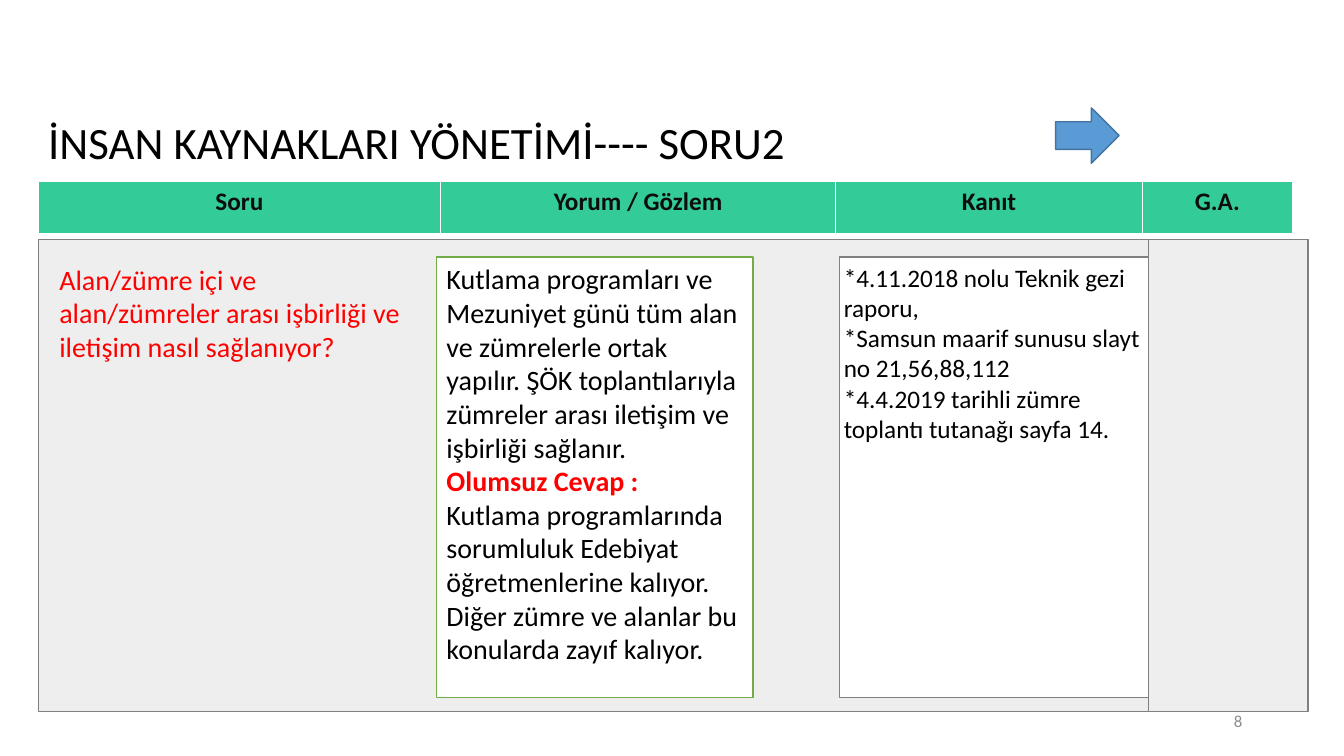
"""Builds the slide on question 2 of human resources management."""
from lxml.etree import SubElement
from pptx import Presentation
from pptx.dml.color import RGBColor
from pptx.enum.shapes import MSO_SHAPE
from pptx.enum.text import MSO_ANCHOR, PP_ALIGN
from pptx.oxml.ns import qn
from pptx.util import Inches, Pt

TITLE = "İNSAN KAYNAKLARI YÖNETİMİ---- SORU2"
PAGE_NUMBER = "8"
COLUMNS = [("Soru", 3.99), ("Yorum / Gözlem", 3.92), ("Kanıt", 3.04), ("G.A.", 1.49)]
QUESTION = ["Alan/zümre içi ve alan/zümreler arası işbirliği ve iletişim nasıl sağlanıyor?"]
POSITIVE = (
    "Kutlama programları ve Mezuniyet günü tüm alan ve zümrelerle ortak yapılır. "
    "ŞÖK toplantılarıyla zümreler arası iletişim ve işbirliği sağlanır."
)
NEGATIVE_LABEL = "Olumsuz Cevap :"
NEGATIVE = (
    "Kutlama programlarında sorumluluk Edebiyat öğretmenlerine kalıyor. "
    "Diğer zümre ve alanlar bu konularda zayıf kalıyor."
)
EVIDENCE = [
    "*4.11.2018 nolu Teknik gezi raporu,",
    "*Samsun maarif sunusu slayt no 21,56,88,112",
    "*4.4.2019 tarihli zümre toplantı tutanağı sayfa 14.",
]

THEME = {
    "font": "Calibri",
    "title_size": 32, "body_size": 20, "table_size": 18, "number_size": 12,
    "black": "000000", "red": "FF0000", "heading": "0D0D0D", "muted": "8C8C8C",
    "white": "FFFFFF", "panel": "EEEEEE", "gray": "808080", "green": "70AD47",
    "teal": "33CC99", "blue": "5B9BD5", "navy": "43739E",
}

LEFT = 0.38
BODY_TOP, BODY_HEIGHT = 2.38, 4.68
CARD_TOP, CARD_HEIGHT = 2.55, 4.37


def color(name):
    return RGBColor.from_string(THEME[name])


def add_span(para, text, size, tint, bold=False):
    span = para.add_run()
    span.text = text
    span.font.name = THEME["font"]
    span.font.size = Pt(THEME[size])
    span.font.color.rgb = color(tint)
    span.font.bold = bold


def add_panel(page, place, fill, line, width, kind=MSO_SHAPE.RECTANGLE):
    panel = page.shapes.add_shape(kind, *map(Inches, place))
    panel.shadow.inherit = False
    panel.fill.solid()
    panel.fill.fore_color.rgb = color(fill)
    panel.line.color.rgb = color(line)
    panel.line.width = Pt(width)


def add_text(page, place, spans, size, anchor=MSO_ANCHOR.TOP, align=PP_ALIGN.LEFT, spacing=1.0):
    box = page.shapes.add_textbox(*map(Inches, place))
    frame = box.text_frame
    frame.word_wrap = True
    frame.vertical_anchor = anchor
    for index, (text, tint, bold) in enumerate(spans):
        para = frame.add_paragraph() if index else frame.paragraphs[0]
        para.alignment = align
        para.line_spacing = spacing
        add_span(para, text, size, tint, bold)
    return box


def add_border(cell):
    properties = cell._tc.get_or_add_tcPr()
    for index, (side, width) in enumerate([("lnL", 1), ("lnR", 1), ("lnT", 1), ("lnB", 3)]):
        border = properties.makeelement(qn(f"a:{side}"), {"w": str(Pt(width))})
        fill = SubElement(border, qn("a:solidFill"))
        SubElement(fill, qn("a:srgbClr"), val=THEME["white"])
        properties.insert(index, border)


def add_heading_table(page):
    width = sum(size for _, size in COLUMNS)
    place = map(Inches, (LEFT, 1.8, width, 0.53))
    table = page.shapes.add_table(1, len(COLUMNS), *place).table
    for index, (heading, size) in enumerate(COLUMNS):
        table.columns[index].width = Inches(size)
        cell = table.cell(0, index)
        cell.fill.solid()
        cell.fill.fore_color.rgb = color("teal")
        add_border(cell)
        para = cell.text_frame.paragraphs[0]
        para.alignment = PP_ALIGN.CENTER
        add_span(para, heading, "table_size", "heading", True)


def main():
    deck = Presentation()
    deck.slide_width, deck.slide_height = Inches(13.33), Inches(7.5)
    page = deck.slides.add_slide(deck.slide_layouts[6])

    add_panel(page, (LEFT, BODY_TOP, 12.6, BODY_HEIGHT), "panel", "gray", 0.75)
    add_panel(page, (4.33, CARD_TOP, 3.14, CARD_HEIGHT), "white", "green", 1)
    add_text(page, (LEFT, 1.15, 9.93, 0.57), [(TITLE, "black", False)],
             "title_size", MSO_ANCHOR.MIDDLE, spacing=0.9)
    add_text(page, (9.42, 6.95, 3, 0.4), [(PAGE_NUMBER, "muted", False)],
             "number_size", MSO_ANCHOR.MIDDLE, PP_ALIGN.RIGHT)
    add_heading_table(page)

    question = add_text(page, (0.49, CARD_TOP, 3.64, 1.11),
                        [(text, "red", False) for text in QUESTION], "body_size")
    question.fill.solid()
    question.fill.fore_color.rgb = color("panel")
    answer = [(POSITIVE, "black", False), (NEGATIVE_LABEL, "red", True), (NEGATIVE, "black", False)]
    add_text(page, (4.33, CARD_TOP, 3.14, CARD_HEIGHT), answer, "body_size")

    add_panel(page, (8.33, CARD_TOP, 3.07, CARD_HEIGHT), "white", "gray", 0.75)
    add_text(page, (8.27, CARD_TOP, 3.18, 2.26),
             [(text, "black", False) for text in EVIDENCE], "table_size")
    add_panel(page, (11.39, BODY_TOP, 1.58, BODY_HEIGHT), "panel", "gray", 0.75)
    add_panel(page, (10.47, 1.07, 0.63, 0.55), "blue", "navy", 1, MSO_SHAPE.RIGHT_ARROW)
    deck.save("out.pptx")


if __name__ == "__main__":
    main()
